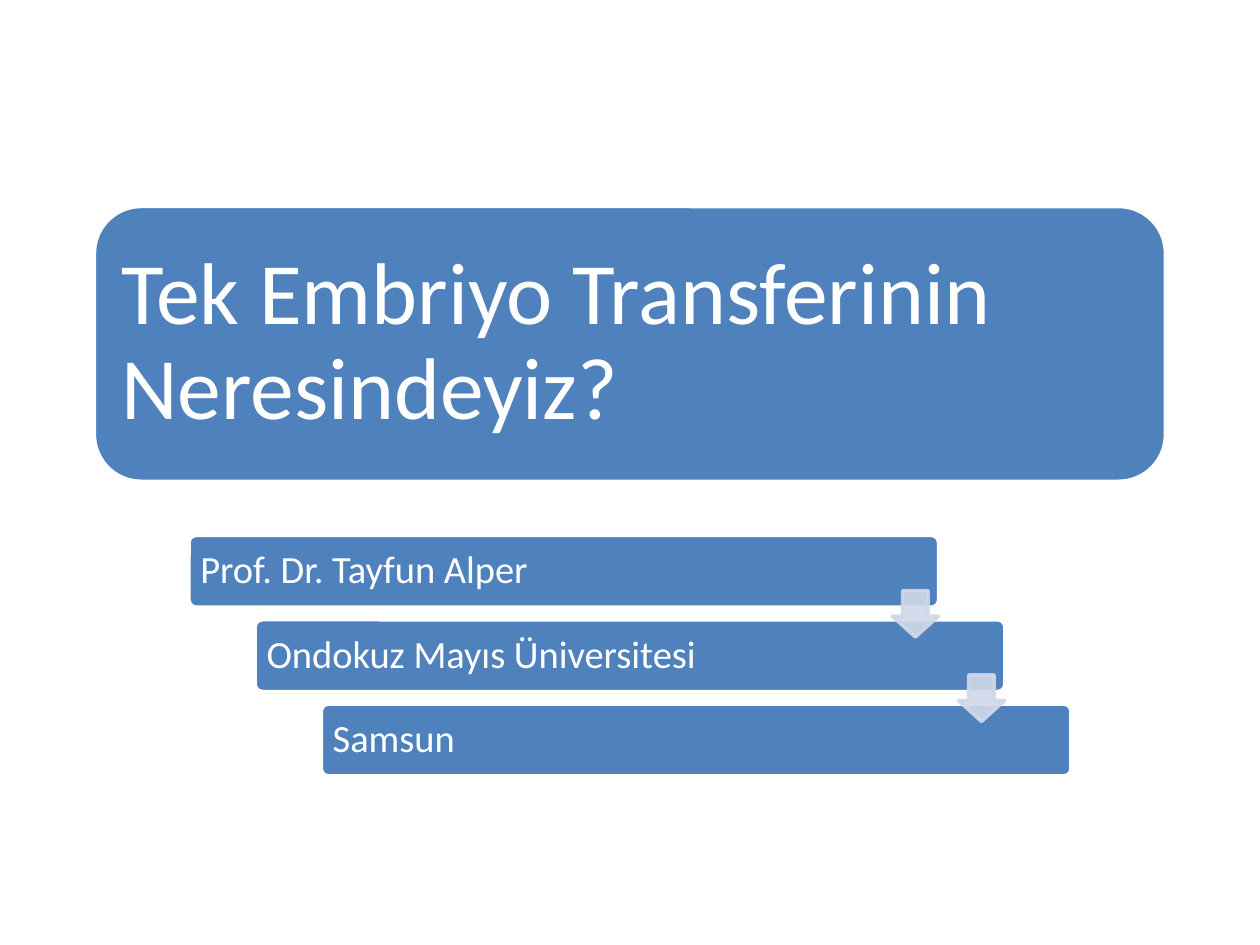
"""Build a title slide with a stepped list of speaker details."""
from dataclasses import dataclass

from lxml.etree import SubElement
from pptx import Presentation
from pptx.dml.color import RGBColor
from pptx.enum.shapes import MSO_SHAPE
from pptx.enum.text import MSO_ANCHOR, PP_ALIGN
from pptx.oxml.ns import qn
from pptx.util import Pt


@dataclass(frozen=True)
class Theme:
    blue: RGBColor = RGBColor(0x4F, 0x81, 0xBD)
    pale: RGBColor = RGBColor(0xD0, 0xD8, 0xE8)
    white: RGBColor = RGBColor(0xFF, 0xFF, 0xFF)
    font: str = "Calibri"
    head: int = 50
    body: int = 22
    line: int = 2


THEME = Theme()
STEPS = ("Prof. Dr. Tayfun Alper", "Ondokuz Mayıs Üniversitesi", "Samsun")
LEFT, TOP, WIDTH, HEIGHT = 108, 306, 428.4, 41
RIGHT, DOWN = 37.8, 48.2
ARROW = 26.6


def add_form(slide, kind, box, fill, edge):
    form = slide.shapes.add_shape(kind, *map(Pt, box))
    form.shadow.inherit = False
    form.fill.solid()
    form.fill.fore_color.rgb = fill
    form.line.color.rgb = edge
    form.line.width = Pt(THEME.line)
    return form


def add_panel(slide, box, text, size, inset, curve):
    panel = add_form(slide, MSO_SHAPE.ROUNDED_RECTANGLE, box,
                     THEME.blue, THEME.white)
    panel.adjustments[0] = curve
    frame = panel.text_frame
    frame.text = text
    frame.word_wrap = True
    frame.vertical_anchor = MSO_ANCHOR.MIDDLE
    frame.margin_left = frame.margin_right = Pt(inset)
    frame.margin_top = frame.margin_bottom = Pt(inset)
    para = frame.paragraphs[0]
    para.alignment = PP_ALIGN.LEFT
    para.line_spacing = 0.9
    font = para.runs[0].font
    font.name = THEME.font
    font.size = Pt(size)
    font.color.rgb = THEME.white


def add_arrow(slide, left, top):
    arrow = add_form(slide, MSO_SHAPE.DOWN_ARROW, (left, top, ARROW, ARROW),
                     THEME.pale, THEME.pale)
    arrow.adjustments[0] = 0.55
    arrow.adjustments[1] = 0.45
    for color in arrow.element.spPr.iter(qn("a:srgbClr")):
        SubElement(color, qn("a:alpha"), val="90000")


def add_steps(slide):
    spots = [(LEFT + i * RIGHT, TOP + i * DOWN) for i in range(len(STEPS))]
    for (left, top), text in zip(spots, STEPS):
        add_panel(slide, (left, top, WIDTH, HEIGHT), text,
                  THEME.body, 5.3, 0.1)
    for left, top in spots[:-1]:
        add_arrow(slide, left + WIDTH - ARROW, top + 31.5)


def main():
    deck = Presentation()
    deck.slide_width, deck.slide_height = Pt(720), Pt(540)
    slide = deck.slides.add_slide(deck.slide_layouts[6])
    add_panel(slide, (54, 118, 612, 157),
              "Tek Embriyo Transferinin Neresindeyiz?",
              THEME.head, 7.5, 0.17)
    add_steps(slide)
    deck.save("out.pptx")


if __name__ == "__main__":
    main()
